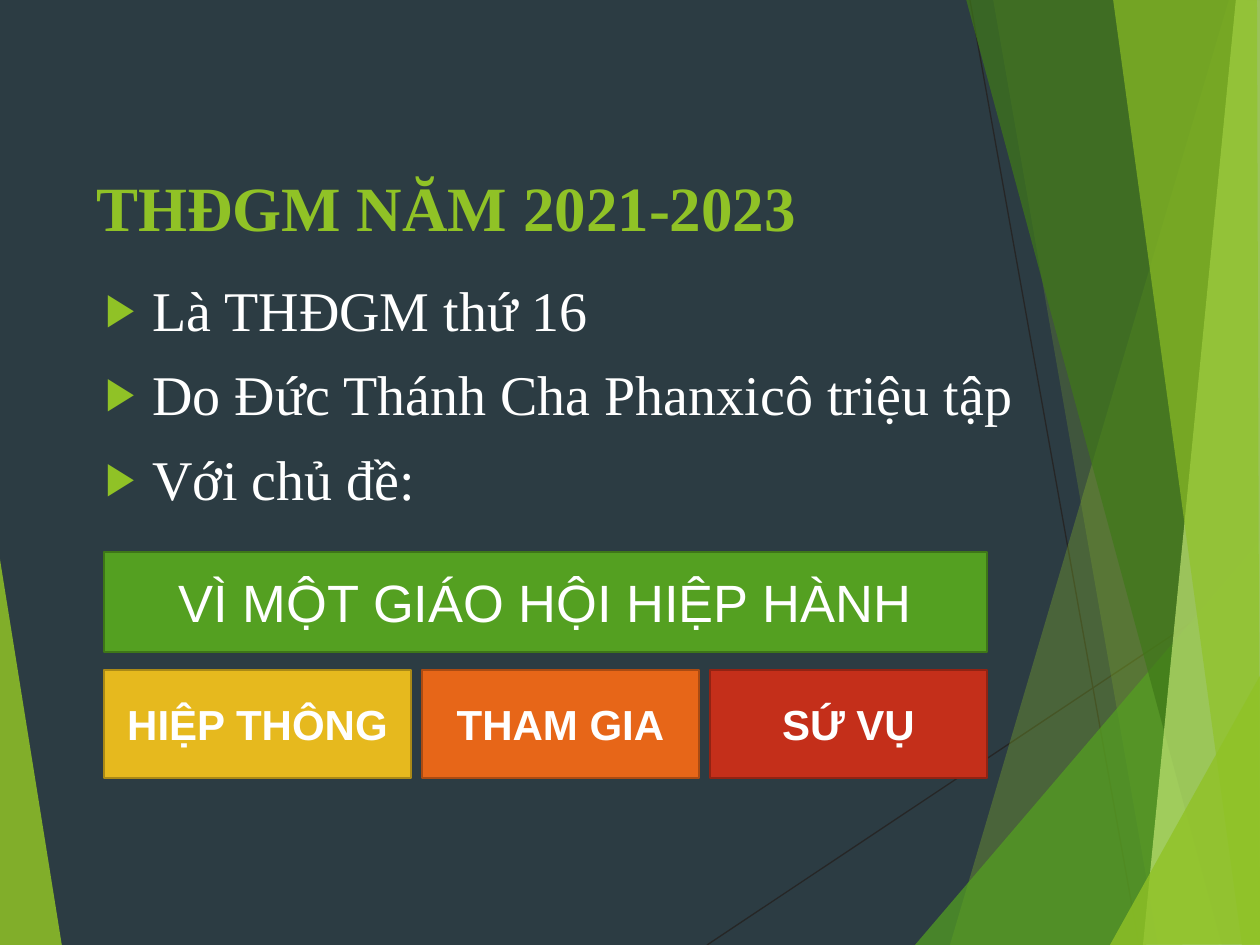
from lxml.etree import SubElement
from pptx import Presentation
from pptx.dml.color import RGBColor
from pptx.enum.shapes import MSO_CONNECTOR as Connector, MSO_SHAPE as Shape
from pptx.enum.text import MSO_ANCHOR as Anchor, PP_ALIGN as Align
from pptx.oxml.ns import qn
from pptx.util import Pt

COLORS = {
    "night": "2C3C43", "ink": "262626", "white": "FFFFFF",
    "lime": "90C226", "green": "54A021", "forest": "3F7819", "pale": "C0E474",
    "green_edge": "3E7618", "gold": "E6B91E", "gold_edge": "AA8916",
    "orange": "E76618", "orange_edge": "AB4B12",
    "red": "C42F1A", "red_edge": "912313",
}
SERIF, SANS = "Times New Roman", "Arial"

HEADING = "THĐGM NĂM 2021-2023"
POINTS = ["Là THĐGM thứ 16", "Do Đức Thánh Cha Phanxicô triệu tập", "Với chủ đề:"]
THEME = "VÌ MỘT GIÁO HỘI HIỆP HÀNH"
PILLARS = [
    ("HIỆP THÔNG", "gold", 307),
    ("THAM GIA", "orange", 277),
    ("SỨ VỤ", "red", 277),
]
RAYS = [(707, 945, 1261, 576), (970, 0, 1139, 945)]
FACETS = [
    ("lime", 85, [(-1, 553), (62, 946), (-1, 945)]),
    ("lime", 30, [(1229, 0), (950, 945), (1262, 946), (1261, 1)]),
    ("lime", 20, [(993, -1), (1158, 945), (1261, 945), (1261, -1)]),
    ("green", 72, [(915, 945), (1260, 541), (1261, 945)]),
    ("forest", 70, [(966, -1), (1222, 945), (1261, 944), (1261, -1)]),
    ("pale", 70, [(1236, -1), (1143, 945), (1261, 945), (1260, -1)]),
    ("lime", 65, [(1113, -1), (1242, 945), (1260, 945), (1257, -1)]),
    ("lime", 80, [(1110, 945), (1261, 674), (1261, 944)]),
]
LEFT, THEME_TOP, THEME_WIDTH, THEME_HEIGHT = 104, 552, 883, 100
PILLAR_TOP, PILLAR_HEIGHT, PILLAR_GAP = 670, 108, 11


def px(length):
    return round(length * 914400 / 126)


def rgb(name):
    return RGBColor.from_string(COLORS[name])


def style(paragraph, size, face, color, bold=False):
    font = paragraph.font
    font.size, font.name, font.bold = Pt(size), face, bold
    font.color.rgb = rgb(color)


def add_ray(slide, ends):
    ray = slide.shapes.add_connector(Connector.STRAIGHT, *map(px, ends))
    ray.line.color.rgb = rgb("ink")
    ray.line.width = Pt(0.75)
    SubElement(ray._element.spPr, qn("a:effectLst"))


def add_facet(slide, color, opacity, corners):
    start, *others = [(px(x), px(y)) for x, y in corners]
    builder = slide.shapes.build_freeform(*start)
    builder.add_line_segments(others, close=True)
    facet = builder.convert_to_shape()
    facet.shadow.inherit = False
    facet.line.fill.background()
    facet.fill.solid()
    facet.fill.fore_color.rgb = rgb(color)
    tint = facet._element.spPr.find(".//" + qn("a:srgbClr"))
    SubElement(tint, qn("a:alpha"), val=str(opacity * 1000))


def add_text(slide, box, margin_top):
    frame = slide.shapes.add_textbox(*map(px, box)).text_frame
    frame.word_wrap = True
    frame.margin_top = px(margin_top)
    return frame


def add_bullet(paragraph):
    props = paragraph._p.get_or_add_pPr()
    props.set("marL", str(px(47)))
    props.set("indent", str(px(-47)))
    tint = SubElement(props, qn("a:buClr"))
    SubElement(tint, qn("a:srgbClr"), val=COLORS["lime"])
    SubElement(props, qn("a:buSzPct"), val="80000")
    SubElement(props, qn("a:buFont"), typeface=SANS)
    SubElement(props, qn("a:buChar"), char="▶")


def add_panel(slide, text, color, box, size, bold):
    panel = slide.shapes.add_shape(Shape.RECTANGLE, *map(px, box))
    panel.shadow.inherit = False
    panel.fill.solid()
    panel.fill.fore_color.rgb = rgb(color)
    panel.line.color.rgb = rgb(color + "_edge")
    panel.line.width = Pt(1.5)
    frame = panel.text_frame
    frame.word_wrap = True
    frame.vertical_anchor = Anchor.MIDDLE
    label = frame.paragraphs[0]
    label.text = text
    label.alignment = Align.CENTER
    style(label, size, SANS, "white", bold)


def main():
    deck = Presentation()
    deck.slide_width, deck.slide_height = px(1260), px(945)
    slide = deck.slides.add_slide(deck.slide_layouts[6])
    slide.background.fill.solid()
    slide.background.fill.fore_color.rgb = rgb("night")

    for ends in RAYS:
        add_ray(slide, ends)
    for facet in FACETS:
        add_facet(slide, *facet)

    heading = add_text(slide, (84, 155, 874, 181), 13).paragraphs[0]
    heading.text = HEADING
    style(heading, 36, SERIF, "lime", True)

    body = add_text(slide, (93, 265, 954, 534), 10)
    for index, text in enumerate(POINTS):
        point = body.add_paragraph() if index else body.paragraphs[0]
        point.text = text
        point.space_before = Pt(10)
        style(point, 32, SERIF, "white")
        add_bullet(point)

    add_panel(slide, THEME, "green", (LEFT, THEME_TOP, THEME_WIDTH, THEME_HEIGHT), 30, False)
    left = LEFT
    for text, color, width in PILLARS:
        add_panel(slide, text, color, (left, PILLAR_TOP, width, PILLAR_HEIGHT), 24, True)
        left += width + PILLAR_GAP

    deck.save("out.pptx")


if __name__ == "__main__":
    main()
